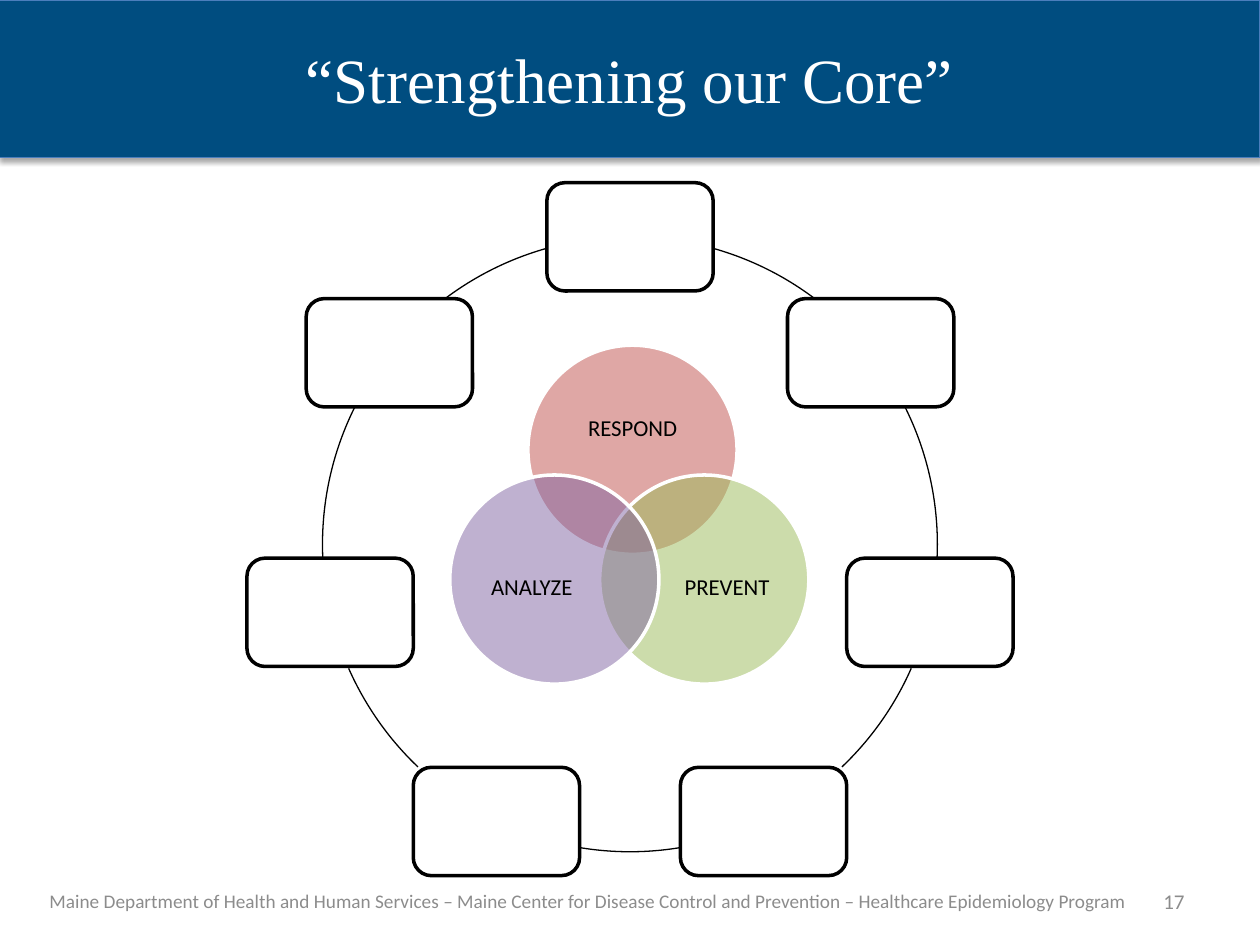
"""Build the "Strengthening our Core" slide."""
import dataclasses
import math

import lxml.etree
import pptx
import pptx.dml.color
import pptx.enum.shapes
import pptx.enum.text
import pptx.oxml.ns
import pptx.util

SCALE = 9144
KIND = pptx.enum.shapes.MSO_SHAPE
ALIGN = pptx.enum.text.PP_ALIGN
MID = (500, 432)
REACH = 244
BOX = (132, 86)
DISC = 166
ARCS = [(285.7, 306.8), (333.5, 2.5), (23.8, 46.4), (80.8, 99.2)]


@dataclasses.dataclass(frozen=True)
class Theme:
    """Hold the colours, fonts and type sizes."""
    ink: str = "000000"
    paper: str = "FFFFFF"
    bar: str = "004D80"
    edge: str = "4B7EBC"
    muted: str = "8C8C8C"
    red: str = "C0504D"
    green: str = "9BBB59"
    violet: str = "8064A2"
    serif: str = "Times New Roman"
    sans: str = "Calibri"
    title: int = 36
    label: int = 13
    number: int = 12
    footer: int = 11
    thin: float = 0.75
    thick: int = 2


THEME = Theme()


def px(*sizes):
    """Turn px lengths into EMU."""
    return [pptx.util.Emu(size * SCALE) for size in sizes]


def tint(colour):
    """Make a colour from its hex name."""
    return pptx.dml.color.RGBColor.from_string(colour)


def add_node(parent, tag, **values):
    """Append a DrawingML node to a parent."""
    name = pptx.oxml.ns.qn("a:" + tag)
    return lxml.etree.SubElement(parent, name, values)


def paint(shape, fill, line, width, alpha=100):
    """Set the fill, line and opacity of a shape."""
    if fill:
        shape.fill.solid()
        shape.fill.fore_color.rgb = tint(fill)
        if alpha < 100:
            node = shape.fill._xPr.find(".//" + pptx.oxml.ns.qn("a:srgbClr"))
            add_node(node, "alpha", val=str(alpha * 1000))
    else:
        shape.fill.background()
    shape.line.color.rgb = tint(line)
    shape.line.width = pptx.util.Pt(width)


def add_shape(shapes, kind, place, fill, line, width, alpha=100):
    """Add a preset shape with no shadow."""
    shape = shapes.add_shape(kind, *px(*place))
    shape.shadow.inherit = False
    paint(shape, fill, line, width, alpha)
    return shape


def write(shape, text, size, font, colour, align=ALIGN.CENTER):
    """Put one line of styled text in the middle of a shape."""
    frame = shape.text_frame
    frame.word_wrap = True
    frame.auto_size = pptx.enum.text.MSO_AUTO_SIZE.NONE
    frame.vertical_anchor = pptx.enum.text.MSO_ANCHOR.MIDDLE
    line = frame.paragraphs[0]
    line.text = text
    line.alignment = align
    line.font.size = pptx.util.Pt(size)
    line.font.name = font
    line.font.color.rgb = tint(colour)
    return frame


def add_title(slide):
    """Format the title as a shaded bar."""
    title = slide.shapes.title
    title.left, title.top, title.width, title.height = px(-1, 0, 1001, 125)
    paint(title, THEME.bar, THEME.edge, THEME.thin)
    write(title, "“Strengthening our Core”", THEME.title, THEME.serif, THEME.paper)
    effects = add_node(title._element.spPr, "effectLst")
    shade = add_node(effects, "outerShdw", blurRad=str(pptx.util.Pt(3.1)),
                     dist=str(pptx.util.Pt(1.8)), dir="5400000", rotWithShape="0")
    add_node(add_node(shade, "srgbClr", val=THEME.ink), "alpha", val="35000")


def flip(angle):
    """Mirror an angle from the right half to the left, within 0 to 360."""
    return (180 - angle) % 360


def add_ring(slide):
    """Add seven boxes on a circle, with an arc between each pair."""
    shapes = slide.shapes.add_group_shape().shapes
    wide, high = BOX
    left = [(flip(end), flip(start)) for start, end in ARCS[-2::-1]]
    ring = (MID[0] - REACH, MID[1] - REACH, 2 * REACH, 2 * REACH)
    for step, ends in enumerate(ARCS + left):
        turn = math.tau * step / 7
        x = MID[0] + REACH * math.sin(turn)
        y = MID[1] - REACH * math.cos(turn)
        place = (round(x - wide / 2), round(y - high / 2), wide, high)
        add_shape(shapes, KIND.ROUNDED_RECTANGLE, place,
                  THEME.paper, THEME.ink, THEME.thick)
        arc = add_shape(shapes, KIND.ARC, ring, None, THEME.ink, THEME.thin)
        for index, angle in enumerate(ends):
            arc.adjustments[index] = angle * 0.6


def add_venn(slide):
    """Add three overlapping discs with their labels."""
    shapes = slide.shapes.add_group_shape().shapes
    discs = [
        ("RESPOND", THEME.red, (419, 274), (459, 314, 86, 53)),
        ("PREVENT", THEME.green, (476, 377), (542, 434, 70, 65)),
        ("ANALYZE", THEME.violet, (357, 377), (387, 434, 70, 65)),
    ]
    for text, colour, corner, place in discs:
        add_shape(shapes, KIND.OVAL, (*corner, DISC, DISC),
                  colour, THEME.paper, THEME.thick, 50)
        label = shapes.add_textbox(*px(*place))
        frame = write(label, text, THEME.label, THEME.sans, THEME.ink)
        frame.margin_left = frame.margin_right = 0
        frame.margin_top = frame.margin_bottom = 0
        frame.paragraphs[0].line_spacing = 0.9


def add_note(slide, place, text, size, align):
    """Add a muted line at the foot of the slide."""
    note = slide.shapes.add_textbox(*px(*place))
    write(note, text, size, THEME.sans, THEME.muted, align)


def main():
    """Build and save the slide."""
    deck = pptx.Presentation()
    deck.slide_width, deck.slide_height = px(1000, 750)
    slide = deck.slides.add_slide(deck.slide_layouts[5])
    add_title(slide)
    add_ring(slide)
    add_note(slide, (717, 695, 233, 40), "17", THEME.number, ALIGN.RIGHT)
    add_note(slide, (17, 695, 900, 40),
             "Maine Department of Health and Human Services – Maine Center for "
             "Disease Control and Prevention – Healthcare Epidemiology Program",
             THEME.footer, ALIGN.CENTER)
    add_venn(slide)
    deck.save("out.pptx")


if __name__ == "__main__":
    main()
